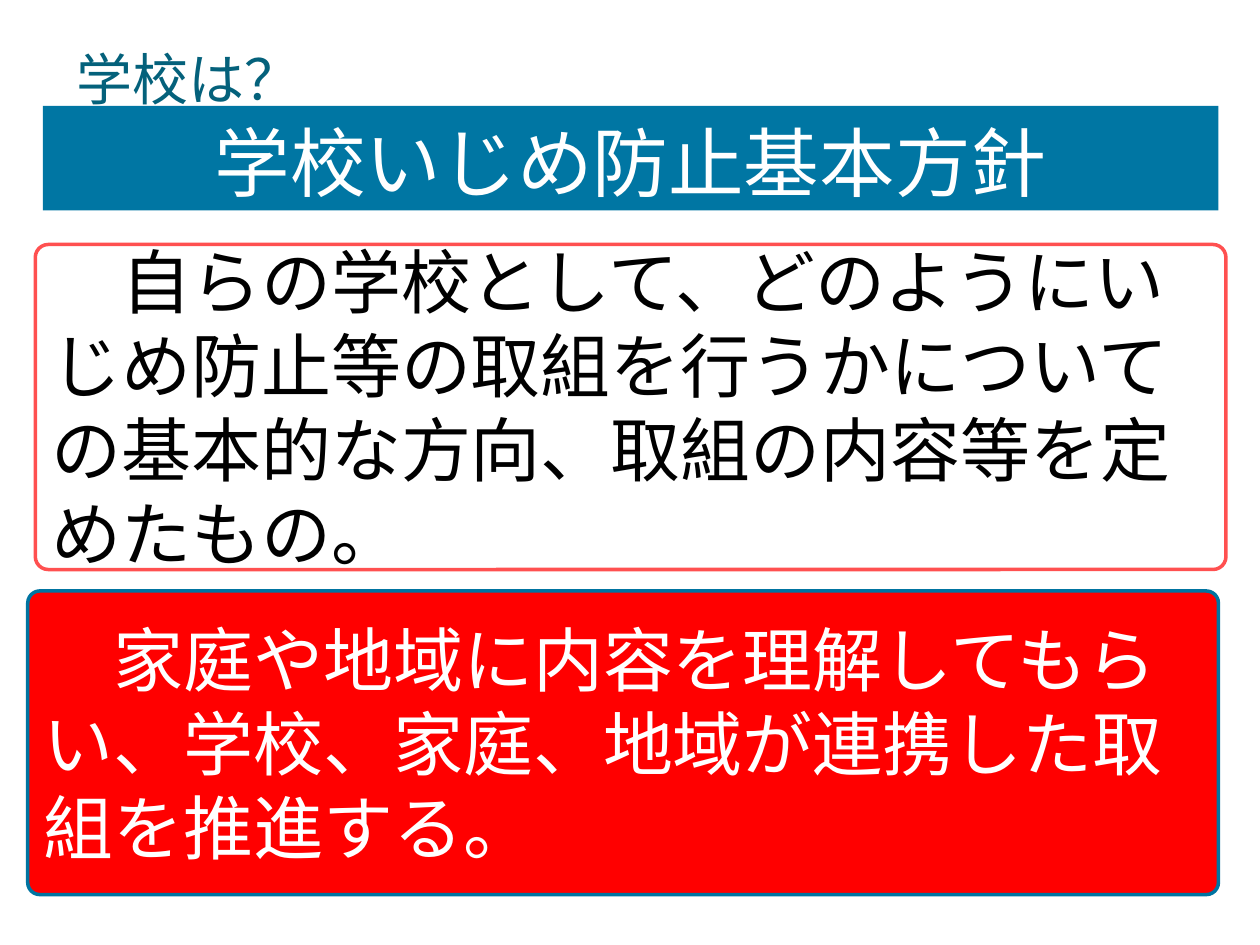
from pptx import Presentation
from pptx.dml.color import RGBColor
from pptx.enum import shapes, text
from pptx.oxml import ns
from pptx.util import Pt
from lxml import etree

WHITE = RGBColor(0xFF, 0xFF, 0xFF)
BLACK = RGBColor(0, 0, 0)
RED = RGBColor(0xFF, 0, 0)
CORAL = RGBColor(0xFF, 0x50, 0x50)
BLUE = RGBColor(0, 0x76, 0xA3)
EDGE_BLUE = RGBColor(0, 0x74, 0xA1)
TEAL = RGBColor(0x04, 0x61, 0x7B)
JAPANESE = "Noto Sans CJK JP"


def write(shape, words, size, color, font=JAPANESE, align=text.PP_ALIGN.LEFT):
    frame = shape.text_frame
    frame.word_wrap = True
    frame.vertical_anchor = text.MSO_ANCHOR.MIDDLE
    paragraph = frame.paragraphs[0]
    paragraph.alignment = align
    run = paragraph.add_run()
    run.text = words
    run.font.size = Pt(size)
    run.font.name = font
    run.font.color.rgb = color
    east_asian = etree.SubElement(run.font._element, ns.qn("a:ea"))
    east_asian.set("typeface", JAPANESE)
    return frame


def tighten(frame):
    frame.margin_left = frame.margin_right = frame.margin_bottom = 0
    frame.margin_top = Pt(3.6)


deck = Presentation()
deck.slide_width, deck.slide_height = Pt(720), Pt(540)
slide = deck.slides.add_slide(deck.slide_layouts[6])

panels = [
    (20.16, 139.68, 185.76, None, CORAL, BLACK,
     "\u3000自らの学校として、どのようにいじめ防止等の取組を行うかについての基本的な方向、取組の内容等を定めたもの。".replace("\u3000", "　")),
    (15.84, 337.68, 173.52, RED, EDGE_BLUE, WHITE,
     "　家庭や地域に内容を理解してもらい、学校、家庭、地域が連携した取組を推進する。"),
]
for left, top, height, fill, edge, color, words in panels:
    panel = slide.shapes.add_shape(
        shapes.MSO_SHAPE.ROUNDED_RECTANGLE, Pt(left), Pt(top), Pt(680.4), Pt(height))
    panel.adjustments[0] = 0.04
    panel.shadow.inherit = False
    if fill is None:
        panel.fill.background()
    else:
        panel.fill.solid()
        panel.fill.fore_color.rgb = fill
    panel.line.color.rgb = edge
    panel.line.width = Pt(2)
    write(panel, words, 40, color)

heading = slide.shapes.add_shape(
    shapes.MSO_SHAPE.RECTANGLE, Pt(24.48), Pt(60.48), Pt(671.76), Pt(59.76))
heading.shadow.inherit = False
heading.fill.solid()
heading.fill.fore_color.rgb = BLUE
heading.line.fill.background()
tighten(write(heading, "学校いじめ防止基本方針", 43.2, WHITE, "Calibri", text.PP_ALIGN.CENTER))

question = slide.shapes.add_textbox(Pt(11.52), Pt(3.6), Pt(666), Pt(60.48))
question_frame = write(question, "　学校は？", 32, TEAL)
tighten(question_frame)
question_frame.vertical_anchor = text.MSO_ANCHOR.BOTTOM
question_frame.paragraphs[0].line_spacing = 1.5
question_frame.paragraphs[0].space_after = Pt(18)

deck.save("out.pptx")
